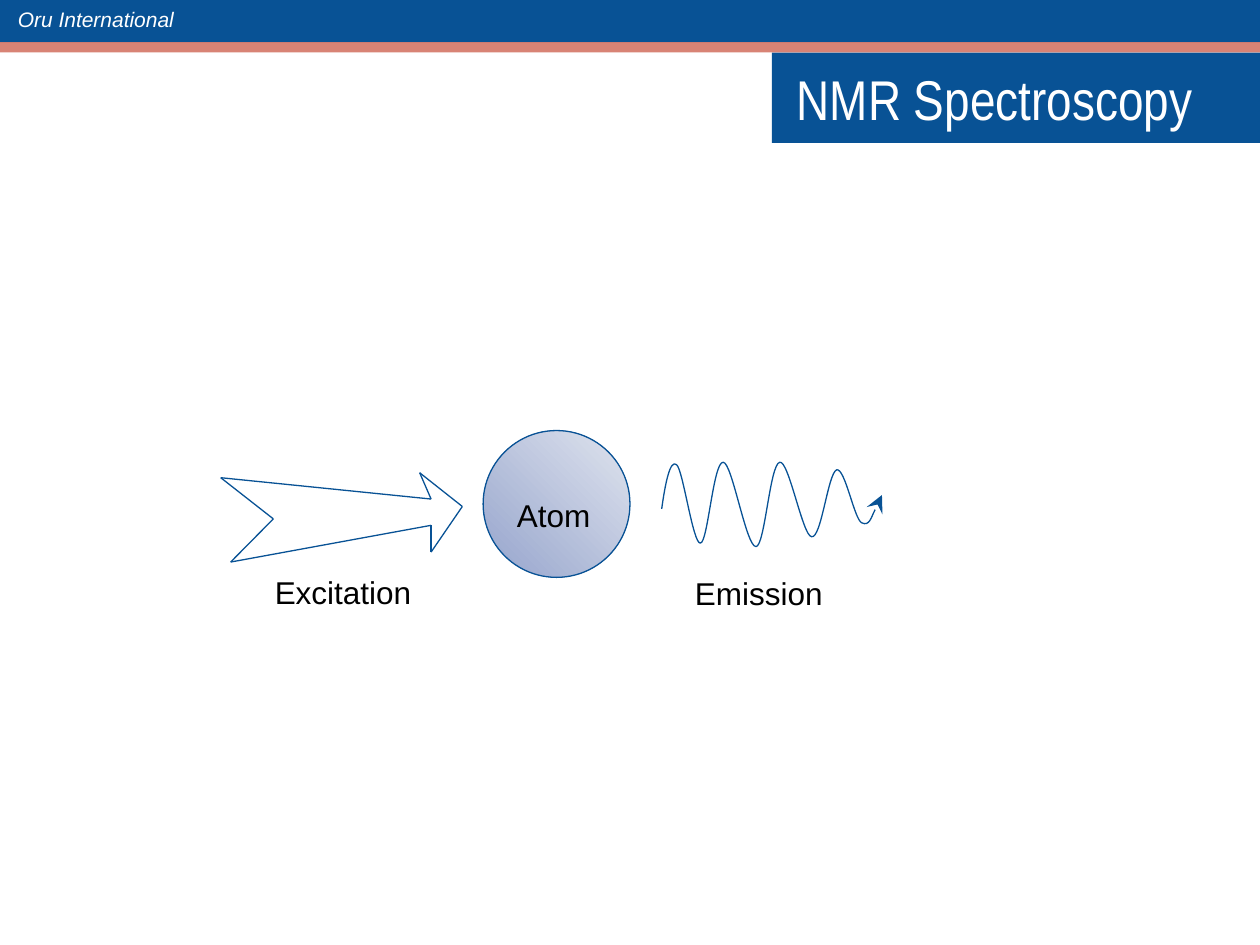
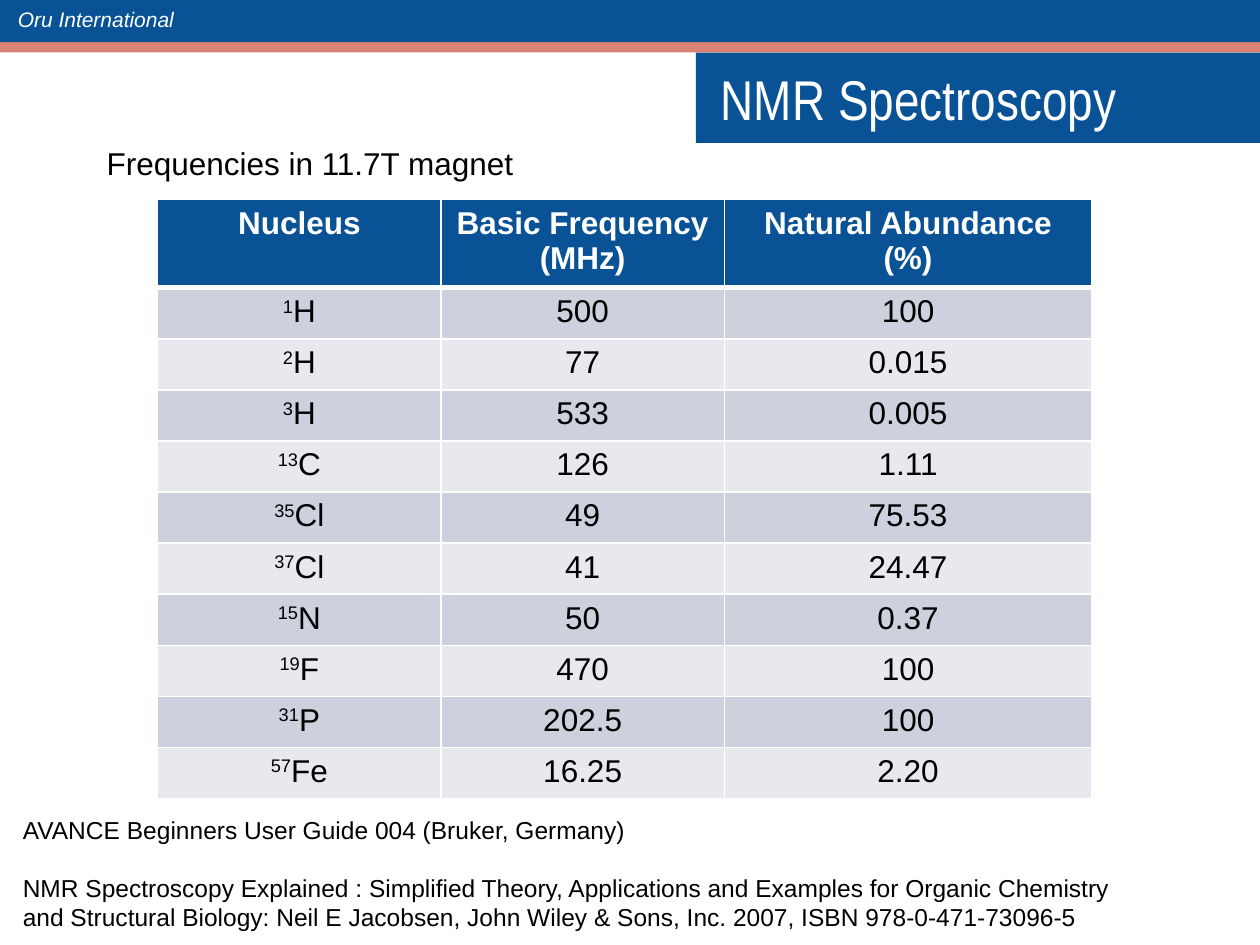
from itertools import pairwise

from lxml import etree
from pptx import Presentation
from pptx import util as u
from pptx.dml.color import RGBColor
from pptx.enum import shapes, text
from pptx.oxml.ns import qn

BLUE = RGBColor(0x08, 0x52, 0x95)
RED = RGBColor(0xBF, 0x31, 0x1A)
WHITE = RGBColor(0xFF, 0xFF, 0xFF)
BLACK = RGBColor(0x00, 0x00, 0x00)
ATOM_DARK = RGBColor(0x95, 0xA4, 0xCC)
ATOM_LIGHT = RGBColor(0xE0, 0xE4, 0xEE)
ROW_COLOURS = (RGBColor(0xCC, 0xD1, 0xDD), RGBColor(0xE7, 0xE9, 0xEF))

SLIDE_WIDTH, SLIDE_HEIGHT = 25.4, 19.05
LINE_WIDTH = u.Pt(0.75)

# Outline of the excitation arrow, corner by corner (cm)
ARROW_CORNERS = [
    (4.45, 9.63), (8.69, 10.06), (8.46, 9.53), (9.32, 10.21),
    (8.69, 11.13), (8.69, 10.59), (4.65, 11.33), (5.51, 10.46),
]

# Emission wave: start, then two control points and an end per curve (cm)
WAVE_START = (13.34, 10.26)
WAVE_CURVES = [
    ((13.41, 9.75), (13.51, 9.25), (13.64, 9.37)),
    ((13.77, 9.47), (13.97, 10.97), (14.12, 10.95)),
    ((14.27, 10.95), (14.38, 9.3), (14.58, 9.32)),
    ((14.76, 9.32), (15.04, 11.02), (15.24, 11.02)),
    ((15.42, 11.02), (15.52, 9.35), (15.72, 9.32)),
    ((15.9, 9.27), (16.18, 10.8), (16.36, 10.82)),
    ((16.56, 10.87), (16.69, 9.53), (16.87, 9.47)),
    ((17.04, 9.45), (17.22, 10.46), (17.37, 10.54)),
    ((17.53, 10.62), (17.78, 9.98), (17.78, 9.98)),
]

HEADINGS = ["Nucleus", "Basic Frequency\n(MHz)", "Natural Abundance (%)"]
# Mass number, element, frequency, abundance
NUCLEI = [
    ("1", "H", "500", "100"),
    ("2", "H", "77", "0.015"),
    ("3", "H", "533", "0.005"),
    ("13", "C", "126", "1.11"),
    ("35", "Cl", "49", "75.53"),
    ("37", "Cl", "41", "24.47"),
    ("15", "N", "50", "0.37"),
    ("19", "F", "470", "100"),
    ("31", "P", "202.5", "100"),
    ("57", "Fe", "16.25", "2.20"),
]
REFERENCES = [
    "AVANCE Beginners User Guide 004 (Bruker, Germany)",
    "NMR Spectroscopy Explained : Simplified Theory, Applications and Examples "
    "for Organic Chemistry and Structural Biology: Neil E Jacobsen, "
    "John Wiley & Sons, Inc. 2007, ISBN 978-0-471-73096-5",
]


def format_text(frame, size, colour=BLACK, font="Arial", align=text.PP_ALIGN.LEFT,
                bold=False, italic=False):
    for paragraph in frame.paragraphs:
        paragraph.alignment = align
        for run in paragraph.runs:
            run.font.name = font
            run.font.size = u.Pt(size)
            run.font.bold = bold
            run.font.italic = italic
            run.font.color.rgb = colour


def add_label(slide, words, left, top, width, height, size=18, **style):
    box = slide.shapes.add_textbox(u.Cm(left), u.Cm(top), u.Cm(width), u.Cm(height))
    box.text_frame.word_wrap = True
    box.text_frame.text = words
    format_text(box.text_frame, size, **style)
    return box


def add_band(slide, top, height, colour):
    band = slide.shapes.add_shape(shapes.MSO_SHAPE.RECTANGLE, 0, u.Cm(top),
                                  u.Cm(SLIDE_WIDTH), u.Cm(height))
    band.shadow.inherit = False
    band.fill.solid()
    band.fill.fore_color.rgb = colour
    band.line.fill.background()
    return band


def add_titled_slide(presentation, title_text, title_left):
    """Title-only slide with the shared bands and a title block on the right."""
    slide = presentation.slides.add_slide(presentation.slide_layouts[5])

    # Header bands
    add_band(slide, 0, 0.85, BLUE)
    stripe = add_band(slide, 0.85, 0.21, RED)
    stripe_colour = stripe._element.spPr.find(".//" + qn("a:srgbClr"))
    etree.SubElement(stripe_colour, qn("a:alpha"), val="60000")
    add_label(slide, "Oru International", 0.11, 0, 4.2, 0.76, size=12,
              colour=WHITE, italic=True)

    # Title block
    title = slide.shapes.title
    title.left, title.top = u.Cm(title_left), u.Cm(1.06)
    title.width, title.height = u.Cm(SLIDE_WIDTH - title_left), u.Cm(1.82)
    title.fill.solid()
    title.fill.fore_color.rgb = BLUE
    frame = title.text_frame
    frame.text = title_text
    frame.auto_size = text.MSO_AUTO_SIZE.NONE
    frame.vertical_anchor = text.MSO_ANCHOR.MIDDLE
    frame.margin_left = frame.margin_right = u.Cm(0.5)
    frame.margin_top = frame.margin_bottom = u.Cm(0.25)
    format_text(frame, 32, WHITE, "Arial Narrow")
    return slide


def add_atom(slide, left, top, diameter):
    atom = slide.shapes.add_shape(shapes.MSO_SHAPE.OVAL, u.Cm(left), u.Cm(top),
                                  u.Cm(diameter), u.Cm(diameter))
    atom.shadow.inherit = False
    atom.fill.gradient()
    atom.fill.gradient_angle = 45
    for stop, colour in zip(atom.fill.gradient_stops, (ATOM_DARK, ATOM_LIGHT)):
        stop.color.rgb = colour
    atom.line.color.rgb = BLUE
    atom.line.width = LINE_WIDTH
    frame = atom.text_frame
    frame.text = "Atom"
    frame.vertical_anchor = text.MSO_ANCHOR.TOP
    frame.margin_top = u.Cm(0.88)
    format_text(frame, 18)


def add_outline_arrow(slide, corners):
    group = slide.shapes.add_group_shape()
    for start, end in pairwise(corners + corners[:1]):
        edge = group.shapes.add_connector(shapes.MSO_CONNECTOR.STRAIGHT,
                                          *map(u.Cm, start + end))
        edge.line.color.rgb = BLUE
        edge.line.width = LINE_WIDTH
        etree.SubElement(edge._element.spPr, qn("a:effectLst"))


def add_wave(slide, start, curves):
    builder = slide.shapes.build_freeform(*map(u.Cm, start))
    builder.add_line_segments([tuple(map(u.Cm, curve[-1])) for curve in curves],
                              close=False)
    wave = builder.convert_to_shape()
    wave.shadow.inherit = False
    wave.fill.background()
    wave.line.color.rgb = BLUE
    wave.line.width = LINE_WIDTH
    etree.SubElement(wave.line._get_or_add_ln(), qn("a:tailEnd"),
                     type="stealth", w="lg", len="lg")

    # Bend each straight segment into its curve
    segments = wave._element.spPr.findall(".//" + qn("a:lnTo"))
    for segment, curve in zip(segments, curves):
        bend = etree.Element(qn("a:cubicBezTo"))
        for x, y in curve:
            etree.SubElement(bend, qn("a:pt"), x=str(u.Cm(x) - wave.left),
                             y=str(u.Cm(y) - wave.top))
        segment.getparent().replace(segment, bend)


def format_cell(cell, fill, bottom_border=1, **style):
    properties = cell._tc.get_or_add_tcPr()
    for side, points in (("L", 1), ("R", 1), ("T", 1), ("B", bottom_border)):
        border = etree.SubElement(properties, qn(f"a:ln{side}"), w=str(u.Pt(points)))
        solid = etree.SubElement(border, qn("a:solidFill"))
        etree.SubElement(solid, qn("a:srgbClr"), val=str(WHITE))
    cell.fill.solid()
    cell.fill.fore_color.rgb = fill
    format_text(cell.text_frame, 18, align=text.PP_ALIGN.CENTER, **style)


def add_nuclei_table(slide, left, top):
    widths = (5.71, 5.71, 7.41)
    header_height, row_height = 1.75, 1.03
    table = slide.shapes.add_table(
        len(NUCLEI) + 1, len(widths), u.Cm(left), u.Cm(top), u.Cm(sum(widths)),
        u.Cm(header_height + row_height * len(NUCLEI))).table
    table.horz_banding = False
    for column, width in zip(table.columns, widths):
        column.width = u.Cm(width)
    for index, row in enumerate(table.rows):
        row.height = u.Cm(row_height if index else header_height)

    # Header row
    for column, heading in enumerate(HEADINGS):
        cell = table.cell(0, column)
        cell.text = heading
        format_cell(cell, BLUE, bottom_border=3, colour=WHITE, bold=True)

    # One row per nucleus, mass number raised
    for row, (mass, element, frequency, abundance) in enumerate(NUCLEI, start=1):
        paragraph = table.cell(row, 0).text_frame.paragraphs[0]
        mass_run = paragraph.add_run()
        mass_run.text = mass
        mass_run._r.get_or_add_rPr().set("baseline", "30000")
        paragraph.add_run().text = element
        table.cell(row, 1).text = frequency
        table.cell(row, 2).text = abundance
        for column in range(len(widths)):
            format_cell(table.cell(row, column), ROW_COLOURS[(row - 1) % 2])


def build_emission_slide(presentation):
    slide = add_titled_slide(presentation, "NMR Spectroscopy", 15.56)
    add_atom(slide, 9.74, 8.68, 2.96)
    add_label(slide, "Excitation", 5.29, 11.43, 3.81, 1.02)
    add_label(slide, "Emission", 13.76, 11.45, 3.18, 1.02)
    add_outline_arrow(slide, ARROW_CORNERS)
    add_wave(slide, WAVE_START, WAVE_CURVES)


def build_frequency_slide(presentation):
    slide = add_titled_slide(presentation, "NMR Spectroscopy", 14.03)
    add_nuclei_table(slide, 3.18, 4.02)
    add_label(slide, "Frequencies in 11.7T magnet", 1.9, 2.78, 8.89, 1.02)
    references = add_label(slide, "\n".join(REFERENCES), 0.21, 16.31, 23.06, 2.64, size=14)
    references.text_frame.paragraphs[1].space_before = u.Pt(16)


def main():
    presentation = Presentation()
    presentation.slide_width = u.Cm(SLIDE_WIDTH)
    presentation.slide_height = u.Cm(SLIDE_HEIGHT)
    build_emission_slide(presentation)
    build_frequency_slide(presentation)
    presentation.save("out.pptx")


if __name__ == "__main__":
    main()
